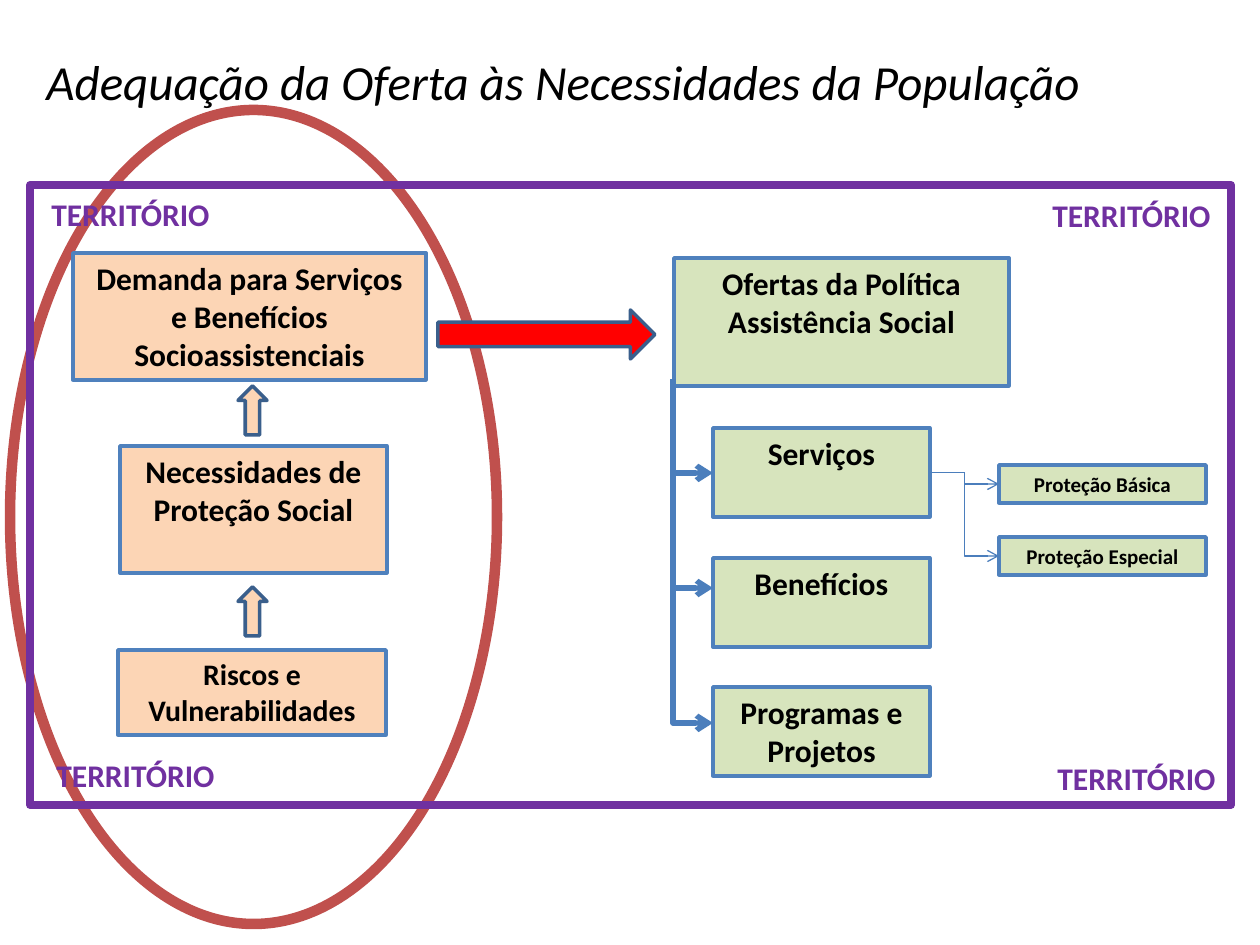
from dataclasses import dataclass

from lxml.etree import SubElement
from pptx import Presentation
from pptx.dml.color import RGBColor
from pptx.enum.shapes import MSO_CONNECTOR as Link, MSO_SHAPE as Shape
from pptx.enum.text import MSO_ANCHOR as Anchor, PP_ALIGN as Align
from pptx.oxml.ns import qn
from pptx.util import Emu, Pt


@dataclass(frozen=True)
class Theme:
    """Colours, font and type sizes of the slide."""
    font: str = "Calibri"
    ink: str = "000000"
    white: str = "FFFFFF"
    peach: str = "FCD5B5"
    green: str = "D7E4BD"
    red: str = "FF0000"
    brick: str = "C0504D"
    purple: str = "7030A0"
    border: str = "4F81BD"
    arrow_border: str = "3A5F8C"
    link: str = "4B7EBC"
    title: int = 28
    body: int = 18
    risk: int = 17
    small: int = 12


THEME = Theme()
PX = 914400 / 126


def emu(*lengths):
    """Turn px lengths into EMU."""
    return [Emu(round(length * PX)) for length in lengths]


def color(code):
    """Turn a hex code into a colour."""
    return RGBColor.from_string(code)


def write(box, text, size=THEME.body, ink=THEME.ink, bold=True, italic=False, align=Align.CENTER):
    """Put one formatted paragraph at the top of a box."""
    frame = box.text_frame
    frame.word_wrap = True
    frame.vertical_anchor = Anchor.TOP
    para = frame.paragraphs[0]
    para.alignment = align
    span = para.add_run()
    span.text = text
    font = span.font
    font.name, font.size, font.bold, font.italic = THEME.font, Pt(size), bold, italic
    font.color.rgb = color(ink)


def add_label(page, at, text, **style):
    """Add a plain text box."""
    write(page.shapes.add_textbox(*emu(*at)), text, **style)


def add_figure(page, kind, at, fill=None, line=THEME.border, width=2):
    """Add a preset shape with its fill and outline."""
    figure = page.shapes.add_shape(kind, *emu(*at))
    figure.shadow.inherit = False
    if fill:
        figure.fill.solid()
        figure.fill.fore_color.rgb = color(fill)
    else:
        figure.fill.background()
    figure.line.color.rgb = color(line)
    figure.line.width = Pt(width)
    return figure


def add_card(page, at, fill, text, **style):
    """Add a filled rectangle with text."""
    card = add_figure(page, Shape.RECTANGLE, at, fill)
    write(card, text, **style)
    return card


def add_elbow(page, ends, width):
    """Add an elbow connector with an open arrowhead."""
    elbow = page.shapes.add_connector(Link.ELBOW, *emu(*ends))
    elbow.line.color.rgb = color(THEME.link)
    elbow.line.width = Pt(width)
    SubElement(elbow.line._get_or_add_ln(), qn("a:tailEnd"), type="arrow")
    SubElement(elbow._element.spPr, qn("a:effectLst"))
    return elbow


def add_corner(page, left, top, right, bottom):
    """Add a connector that runs down and then right."""
    middle_x, middle_y = (left + right) / 2, (top + bottom) / 2
    half_x, half_y = (bottom - top) / 2, (right - left) / 2
    ends = (middle_x - half_x, middle_y - half_y, middle_x + half_x, middle_y + half_y)
    properties = add_elbow(page, ends, 3)._element.spPr
    properties.find(qn("a:prstGeom")).set("prst", "bentConnector2")
    turn = properties.find(qn("a:xfrm"))
    turn.set("rot", "16200000")
    turn.set("flipH", "1")


def add_demand(page):
    """Add the chain from risks up to demand."""
    add_card(page, (73, 253, 353, 127), THEME.peach,
             "Demanda para Serviços e Benefícios Socioassistenciais")
    add_card(page, (120, 446, 267, 127), THEME.peach, "Necessidades de Proteção Social")
    add_card(page, (118, 650, 268, 85), THEME.peach, "Riscos e Vulnerabilidades", size=THEME.risk)
    for top in (386, 587):
        add_figure(page, Shape.UP_ARROW, (238, top, 29, 49), THEME.peach, THEME.arrow_border)


def add_supply(page):
    """Add the policy offers and their branches."""
    add_card(page, (674, 258, 335, 128), THEME.green, "Ofertas da Política Assistência Social")
    offers = [add_card(page, (713, top, 217, 89), THEME.green, text)
              for top, text in ((428, "Serviços"), (558, "Benefícios"), (687, "Programas e Projetos"))]
    for start, end in ((379, 473), (392, 588), (393, 723)):
        add_corner(page, 673, start, 713, end)
    for top, text in ((465, "Proteção Básica"), (537, "Proteção Especial")):
        level = add_card(page, (999, top, 207, 38), THEME.green, text, size=THEME.small)
        branch = add_elbow(page, (930, 473, 999, top + 19), 0.75)
        branch.begin_connect(offers[0], 3)
        branch.end_connect(level, 1)


def main():
    """Build and save the slide."""
    deck = Presentation()
    deck.slide_width, deck.slide_height = emu(1260, 945)
    page = deck.slides.add_slide(deck.slide_layouts[6])
    add_figure(page, Shape.OVAL, (10, 110, 487, 814), THEME.white, THEME.brick, 6)
    add_label(page, (34, 45, 1201, 72), "Adequação da Oferta às Necessidades da População",
              size=THEME.title, bold=False, italic=True, align=Align.JUSTIFY)
    add_figure(page, Shape.RECTANGLE, (30, 185, 1201, 620), None, THEME.purple, 4.5)
    add_demand(page)
    add_supply(page)
    add_figure(page, Shape.RIGHT_ARROW, (438, 310, 217, 49), THEME.red, THEME.arrow_border)
    for left, top in ((32, 189), (37, 750), (1038, 753), (1033, 190)):
        add_label(page, (left, top, 197, 50), "TERRITÓRIO", ink=THEME.purple)
    deck.save("out.pptx")


if __name__ == "__main__":
    main()
